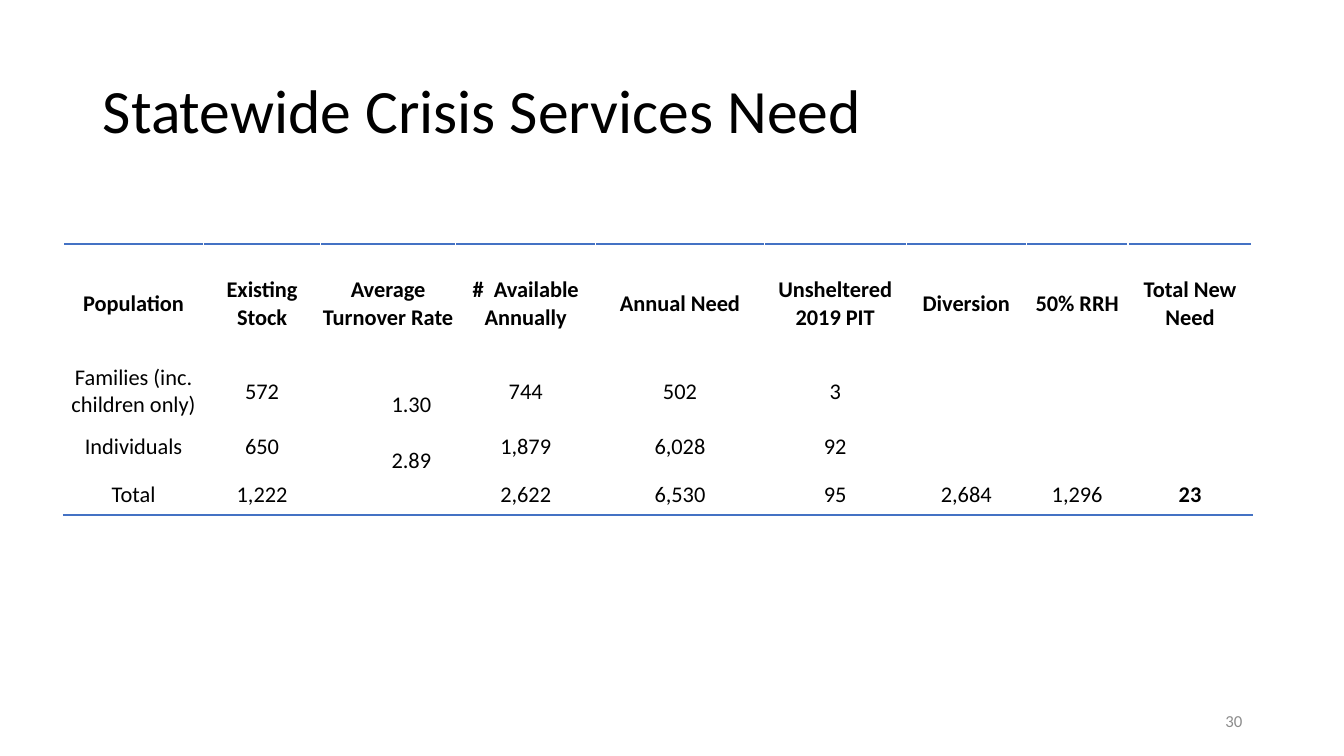
from lxml import etree
from pptx import Presentation
from pptx.dml.color import RGBColor
from pptx.enum.text import MSO_ANCHOR, PP_ALIGN
from pptx.oxml import parse_xml
from pptx.util import Inches, Pt

MIDDLE = MSO_ANCHOR.MIDDLE
LEFT, CENTER, RIGHT = PP_ALIGN.LEFT, PP_ALIGN.CENTER, PP_ALIGN.RIGHT
BLACK = RGBColor(0x00, 0x00, 0x00)
GRAY = RGBColor(0x8C, 0x8C, 0x8C)
BLUE = RGBColor(0x44, 0x72, 0xC4)
DRAWING_NS = "http://schemas.openxmlformats.org/drawingml/2006/main"

TITLE = "Statewide Crisis Services Need"
PAGE_NUMBER = "30"
NEEDS = [
    ["Population", "Existing Stock", "Average Turnover Rate", "#  Available Annually",
     "Annual Need", "Unsheltered 2019 PIT", "Diversion", "50% RRH", "Total New Need"],
    ["Families (inc. children only)", "572", "1.30", "744", "502", "3", "", "", ""],
    ["Individuals", "650", "2.89", "1,879", "6,028", "92", "", "", ""],
    ["Total", "1,222", "", "2,622", "6,530", "95", "2,684", "1,296", "23"],
]
COLUMN_WIDTHS = [1.39, 1.16, 1.34, 1.39, 1.67, 1.41, 1.19, 1.01, 1.23]
ROW_HEIGHTS = [1.19, 0.55, 0.55, 0.4]
TURNOVER_COLUMN = 2
TURNOVER_LEFT, TURNOVER_TOP = 0.46, 0.27


def write(frame, text, size=16, color=BLACK, bold=False, align=CENTER, spacing=1.0):
    """Put one formatted paragraph into a text frame."""
    paragraph = frame.paragraphs[0]
    paragraph.text = text
    paragraph.alignment = align
    paragraph.line_spacing = spacing
    font = paragraph.font
    font.name, font.size, font.bold = "Calibri", Pt(size), bold
    font.color.rgb = color


def rule(cell, side):
    """Draw a one-point blue border on a cell's top (T) or bottom (B)."""
    border = parse_xml(
        f'<a:ln{side} xmlns:a="{DRAWING_NS}" w="{Pt(1)}"><a:solidFill>'
        f'<a:srgbClr val="{BLUE}"/></a:solidFill></a:ln{side}>')
    cell._tc.get_or_add_tcPr().insert(0, border)


def add_needs_table(slide):
    """Build the table of needs with rules above and below it."""
    last_row = len(NEEDS) - 1
    last_column = len(COLUMN_WIDTHS) - 1
    table = slide.shapes.add_table(
        len(NEEDS), len(COLUMN_WIDTHS), Inches(0.63), Inches(2.42),
        Inches(sum(COLUMN_WIDTHS)), Inches(sum(ROW_HEIGHTS))).table
    table.first_row = table.horz_banding = False
    for column, width in zip(table.columns, COLUMN_WIDTHS):
        column.width = Inches(width)
    for row, height in zip(table.rows, ROW_HEIGHTS):
        row.height = Inches(height)
    for r, values in enumerate(NEEDS):
        for c, value in enumerate(values):
            cell = table.cell(r, c)
            cell.fill.background()
            cell.vertical_anchor = MIDDLE
            is_rate = c == TURNOVER_COLUMN and 0 < r < last_row
            cell.margin_left = Inches(TURNOVER_LEFT if is_rate else 0)
            cell.margin_top = Inches(TURNOVER_TOP if is_rate else 0)
            cell.margin_right = cell.margin_bottom = 0
            is_grand_total = (r, c) == (last_row, last_column)
            write(cell.text_frame, value, bold=r == 0 or is_grand_total)
            if r == 0:
                rule(cell, "T")
            if r == last_row:
                rule(cell, "B")


def main():
    """Build and save the slide."""
    deck = Presentation()
    deck.slide_width, deck.slide_height = Inches(13.33), Inches(7.5)
    slide = deck.slides.add_slide(deck.slide_layouts[5])

    title = slide.shapes.title
    title.left, title.top = Inches(0.92), Inches(0.4)
    title.width, title.height = Inches(11.5), Inches(1.45)
    title.text_frame.vertical_anchor = MIDDLE
    write(title.text_frame, TITLE, size=44, align=LEFT, spacing=0.9)

    add_needs_table(slide)

    page = slide.shapes.add_textbox(Inches(9.42), Inches(6.95), Inches(3), Inches(0.4))
    page.text_frame.word_wrap = True
    page.text_frame.vertical_anchor = MIDDLE
    write(page.text_frame, PAGE_NUMBER, size=12, color=GRAY, align=RIGHT)

    deck.save("out.pptx")


if __name__ == "__main__":
    main()
